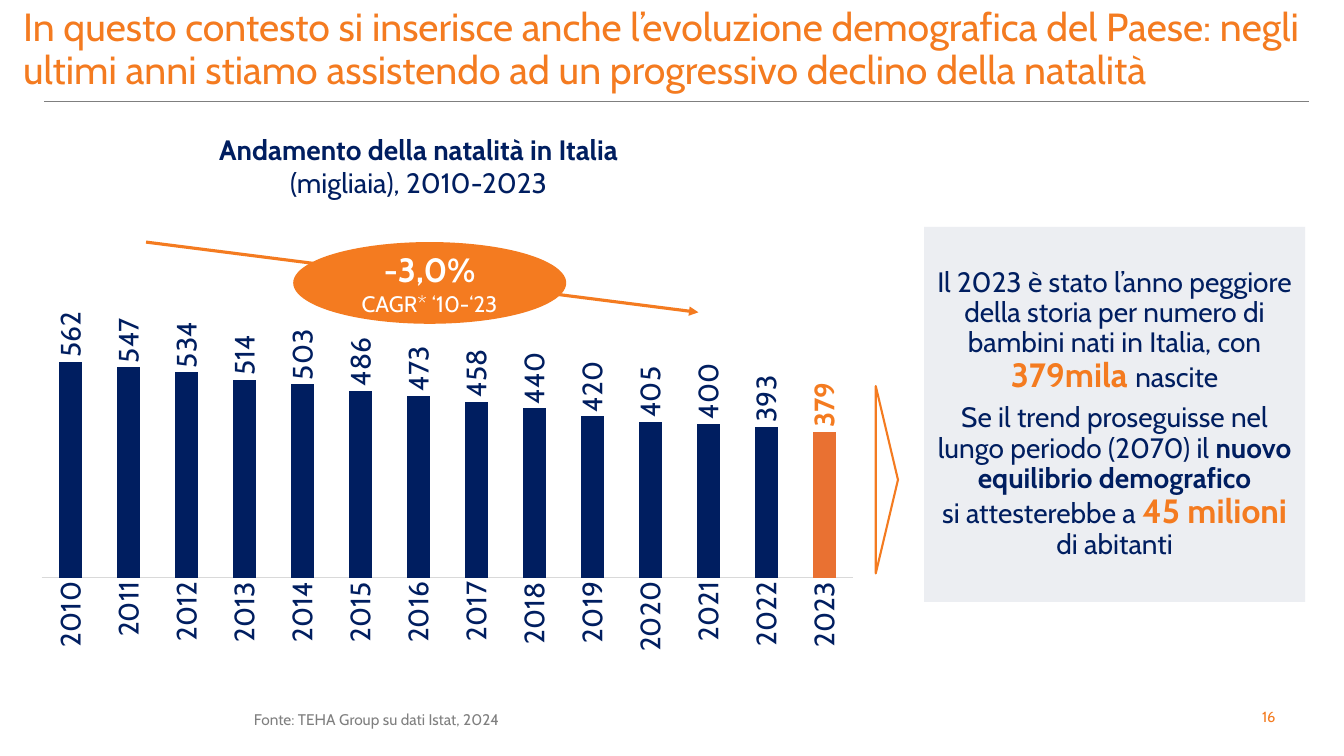
import pptx
import pptx.chart.data
import pptx.dml.color
import pptx.enum.chart
import pptx.enum.shapes
import pptx.enum.text
import pptx.oxml
import pptx.oxml.ns
import pptx.util
from pptx.util import Cm

ORANGE = pptx.dml.color.RGBColor(0xF4, 0x7B, 0x20)
BAR_ORANGE = pptx.dml.color.RGBColor(0xE9, 0x71, 0x32)
NAVY = pptx.dml.color.RGBColor(0x00, 0x1E, 0x60)
PANEL_GREY = pptx.dml.color.RGBColor(0xEC, 0xEE, 0xF2)
TEXT_GREY = pptx.dml.color.RGBColor(0x7F, 0x7F, 0x7F)
AXIS_GREY = pptx.dml.color.RGBColor(0xD9, 0xD9, 0xD9)
WHITE = pptx.dml.color.RGBColor(0xFF, 0xFF, 0xFF)

ALIGN = pptx.enum.text.PP_ALIGN
SHAPE = pptx.enum.shapes.MSO_SHAPE
BREAK = "\n"
BIRTHS = [562, 547, 534, 514, 503, 486, 473, 458, 440, 420, 405, 400, 393, 379]
YEARS = [str(2010 + i) for i in range(len(BIRTHS))]


class SlideBuilder:
    font_name = "Cabin"

    def __init__(self, slide):
        self.slide = slide
        self.shapes = slide.shapes

    def style_font(self, font, size, color, bold=False):
        font.name = self.font_name
        font.size = pptx.util.Pt(size)
        font.color.rgb = color
        font.bold = bold

    def add_paragraphs(self, frame, paragraphs, align=ALIGN.CENTER, spacing=None, gap=0):
        """Fill a frame with paragraphs made of (text, size, color, bold) runs and BREAKs."""
        frame.word_wrap = True
        frame.auto_size = pptx.enum.text.MSO_AUTO_SIZE.NONE
        frame.vertical_anchor = pptx.enum.text.MSO_ANCHOR.MIDDLE
        for i, runs in enumerate(paragraphs):
            paragraph = frame.add_paragraph() if i else frame.paragraphs[0]
            paragraph.alignment = align
            if spacing:
                paragraph.line_spacing = spacing
            if i and gap:
                paragraph.space_before = pptx.util.Pt(gap)
            for part in runs:
                if part == BREAK:
                    paragraph.add_line_break()
                    continue
                text, *style = part
                run = paragraph.add_run()
                run.text = text
                self.style_font(run.font, *style)

    def title(self, box, text):
        heading = self.shapes.title
        heading.left, heading.top, heading.width, heading.height = map(Cm, box)
        self.add_paragraphs(heading.text_frame, [[(text, 28, ORANGE)]], ALIGN.LEFT, 0.9)

    def text(self, box, paragraphs, align=ALIGN.CENTER):
        frame = self.shapes.add_textbox(*map(Cm, box)).text_frame
        self.add_paragraphs(frame, paragraphs, align)

    def shape(self, kind, box, fill=None, line=None):
        shape = self.shapes.add_shape(kind, *map(Cm, box))
        shape.shadow.inherit = False
        if fill:
            shape.fill.solid()
            shape.fill.fore_color.rgb = fill
        else:
            shape.fill.background()
        if line:
            shape.line.color.rgb = line
            shape.line.width = pptx.util.Pt(1.5)
        else:
            shape.line.fill.background()
        return shape

    def line(self, ends, color, width, arrow=False):
        connector = self.shapes.add_connector(
            pptx.enum.shapes.MSO_CONNECTOR.STRAIGHT, *map(Cm, ends))
        connector.line.color.rgb = color
        connector.line.width = pptx.util.Pt(width)
        properties = connector._element.spPr
        if arrow:
            outline = properties.find(pptx.oxml.ns.qn("a:ln"))
            outline.append(outline.makeelement(
                pptx.oxml.ns.qn("a:tailEnd"), {"type": "triangle"}))
        properties.append(properties.makeelement(pptx.oxml.ns.qn("a:effectLst"), {}))

    def column_chart(self, box, categories, values):
        data = pptx.chart.data.CategoryChartData(number_format="#,##0")
        data.categories = categories
        data.add_series("Series 1", values)
        chart = self.shapes.add_chart(
            pptx.enum.chart.XL_CHART_TYPE.COLUMN_CLUSTERED, *map(Cm, box), data).chart
        chart.has_legend = False
        chart.has_title = False
        self.style_font(chart.font, 20, NAVY)
        self.place_plot(chart, x=0.031, y=0.189, w=0.949, h=0.54)

        value_axis = chart.value_axis
        value_axis.minimum_scale, value_axis.maximum_scale = 0, 600
        value_axis.has_major_gridlines = False
        value_axis.visible = False
        years_axis = chart.category_axis
        years_axis.major_tick_mark = pptx.enum.chart.XL_TICK_MARK.NONE
        years_axis.format.line.color.rgb = AXIS_GREY
        years_axis.format.line.width = pptx.util.Pt(0.75)
        self.style_font(years_axis.tick_labels.font, 20, NAVY)
        self.turn_upright(years_axis._element)

        plot = chart.plots[0]
        plot.gap_width, plot.overlap = 150, -27
        plot.vary_by_categories = False
        series = plot.series[0]
        series.format.fill.solid()
        series.format.fill.fore_color.rgb = NAVY
        labels = series.data_labels
        labels.show_value = True
        labels.number_format = "#,##0"
        labels.number_format_is_linked = False
        labels.position = pptx.enum.chart.XL_LABEL_POSITION.OUTSIDE_END
        self.style_font(labels.font, 20, NAVY)

        last_year = series.points[len(values) - 1]
        last_year.format.fill.solid()
        last_year.format.fill.fore_color.rgb = BAR_ORANGE
        self.style_font(last_year.data_label.font, 20, ORANGE, True)
        last_year.data_label.position = pptx.enum.chart.XL_LABEL_POSITION.OUTSIDE_END
        self.turn_upright(labels._element)

    @staticmethod
    def turn_upright(element):
        """Rotate every label inside a chart element to read from bottom to top."""
        for body in element.iter(pptx.oxml.ns.qn("a:bodyPr")):
            body.set("rot", "-5400000")
            body.set("vert", "horz")

    @staticmethod
    def place_plot(chart, **fractions):
        """Fix the inner plot area as fractions of the chart."""
        area = chart._chartSpace.chart.plotArea
        for old in area.findall(pptx.oxml.ns.qn("c:layout")):
            area.remove(old)
        sizes = "".join(f'<c:{k} val="{v}"/>' for k, v in fractions.items())
        area.insert(0, pptx.oxml.parse_xml(
            f'<c:layout {pptx.oxml.ns.nsdecls("c")}><c:manualLayout>'
            '<c:layoutTarget val="inner"/><c:xMode val="edge"/><c:yMode val="edge"/>'
            f'{sizes}</c:manualLayout></c:layout>'))


def main():
    deck = pptx.Presentation()
    deck.slide_width, deck.slide_height = Cm(33.87), Cm(19.05)
    page = SlideBuilder(deck.slides.add_slide(deck.slide_layouts[5]))

    page.title((0.33, 0, 33.38, 2.54),
               "In questo contesto si inserisce anche l’evoluzione demografica del Paese: "
               "negli ultimi anni stiamo assistendo ad un progressivo declino della natalità")
    page.line((1.12, 2.55, 32.99, 2.55), TEXT_GREY, 0.5)

    page.column_chart((0.38, 6.71, 21.56, 10.77), YEARS, BIRTHS)
    page.line((3.68, 6.1, 17.6, 7.87), ORANGE, 2.25, arrow=True)
    growth = page.shape(SHAPE.OVAL, (7.39, 6.1, 6.88, 2.06), fill=ORANGE)
    page.add_paragraphs(growth.text_frame, [[("-3,0%", 24, WHITE, True)],
                                            [("CAGR* ‘10-‘23", 16, WHITE)]])
    page.text((4.06, 3.2, 12.98, 1.96),
              [[("Andamento della natalità in Italia", 20, NAVY, True), BREAK,
                ("(migliaia), 2010-2023", 20, NAVY)]])

    message = page.shape(SHAPE.RECTANGLE, (23.29, 5.72, 9.6, 9.45), fill=PANEL_GREY)
    page.add_paragraphs(message.text_frame, [
        [("Il 2023 è stato l’anno peggiore della storia per numero di bambini nati "
          "in Italia, con ", 20, NAVY),
         ("379mila ", 24, ORANGE, True),
         ("nascite", 20, NAVY)],
        [("Se il trend proseguisse nel lungo periodo (2070) il ", 20, NAVY),
         ("nuovo equilibrio demografico", 20, NAVY, True), BREAK,
         ("si attesterebbe a ", 20, NAVY),
         ("45 milioni", 24, ORANGE, True),
         (" di abitanti", 20, NAVY)],
    ], spacing=0.9, gap=6)
    pointer = page.shape(SHAPE.ISOSCELES_TRIANGLE, (19.99, 11.81, 4.72, 0.56), line=ORANGE)
    pointer.rotation = 90

    page.text((6.15, 17.75, 16.97, 0.74),
              [[("Fonte: TEHA Group su dati Istat, 2024", 11, TEXT_GREY)]], ALIGN.LEFT)
    page.text((31.39, 17.68, 1.17, 0.74), [[("16", 10.5, ORANGE)]])
    deck.save("out.pptx")


if __name__ == "__main__":
    main()
